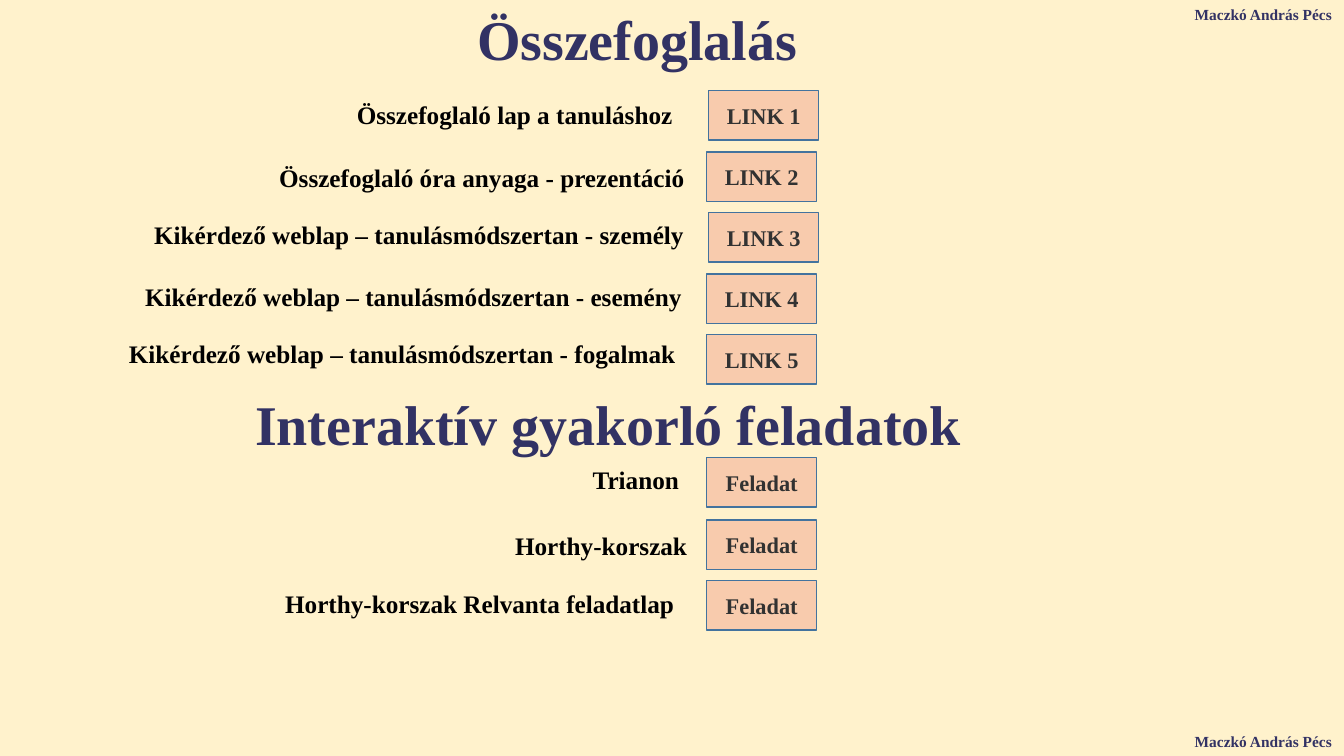
from pptx import Presentation
from pptx.dml.color import RGBColor
from pptx.enum.shapes import MSO_SHAPE
from pptx.enum.text import MSO_ANCHOR, PP_ALIGN
from pptx.util import Pt

PX = 9144
WIDE, HIGH = 1333, 750
FONT = "Times New Roman"
COLORS = {
    "page": "FFF2CC",
    "title": "323264",
    "label": "000000",
    "fill": "F8CBAD",
    "edge": "43739E",
    "button": "323232",
}

TITLES = [
    ("Összefoglalás", 184, 0),
    ("Interaktív gyakorló feladatok", 155, 382),
]
AUTHOR = "Maczkó András Pécs"
LABELS = [
    ("Összefoglaló lap a tanuláshoz", 344, 94, 341),
    ("Összefoglaló óra anyaga - prezentáció", 267, 156, 441),
    ("Kikérdező weblap – tanulásmódszertan - személy", 143, 213, 561),
    ("Kikérdező weblap – tanulásmódszertan - esemény", 134, 274, 561),
    ("Kikérdező weblap – tanulásmódszertan - fogalmak", 118, 331, 578),
    ("Trianon", 578, 456, 107),
    ("Horthy-korszak", 501, 521, 193),
    ("Horthy-korszak Relvanta feladatlap", 273, 579, 424),
]
BUTTONS = [
    ("LINK 1", 703, 90),
    ("LINK 2", 701, 151),
    ("LINK 3", 703, 211),
    ("LINK 4", 701, 272),
    ("LINK 5", 701, 332),
    ("Feladat", 701, 454),
    ("Feladat", 701, 516),
    ("Feladat", 701, 576),
]


def color(name):
    return RGBColor.from_string(COLORS[name])


def write(shape, text, size, tint, align=PP_ALIGN.LEFT, anchor=MSO_ANCHOR.TOP):
    frame = shape.text_frame
    frame.word_wrap = True
    frame.vertical_anchor = anchor
    para = frame.paragraphs[0]
    para.alignment = align
    run = para.add_run()
    run.text = text
    run.font.name = FONT
    run.font.size = Pt(size)
    run.font.bold = True
    run.font.color.rgb = color(tint)


def box(slide, left, top, width, height):
    return slide.shapes.add_textbox(left * PX, top * PX, width * PX, height * PX)


def button(slide, text, left, top):
    shape = slide.shapes.add_shape(
        MSO_SHAPE.RECTANGLE, left * PX, top * PX, 109 * PX, 49 * PX
    )
    shape.shadow.inherit = False
    shape.fill.solid()
    shape.fill.fore_color.rgb = color("fill")
    shape.line.color.rgb = color("edge")
    shape.line.width = Pt(1)
    write(shape, text, 16, "button", PP_ALIGN.CENTER, MSO_ANCHOR.MIDDLE)


def main():
    deck = Presentation()
    deck.slide_width = WIDE * PX
    deck.slide_height = HIGH * PX
    slide = deck.slides.add_slide(deck.slide_layouts[6])
    back = slide.background.fill
    back.solid()
    back.fore_color.rgb = color("page")

    for text, left, top in TITLES:
        write(box(slide, left, top, 896, 77), text, 40, "title", PP_ALIGN.CENTER)
    for top in (0, HIGH - 29):
        write(box(slide, 1175, top, 159, 29), AUTHOR, 11, "title")
    for text, left, top, width in LABELS:
        write(box(slide, left, top, width, 40), text, 18, "label")
    for text, left, top in BUTTONS:
        button(slide, text, left, top)

    deck.save("out.pptx")


if __name__ == "__main__":
    main()
